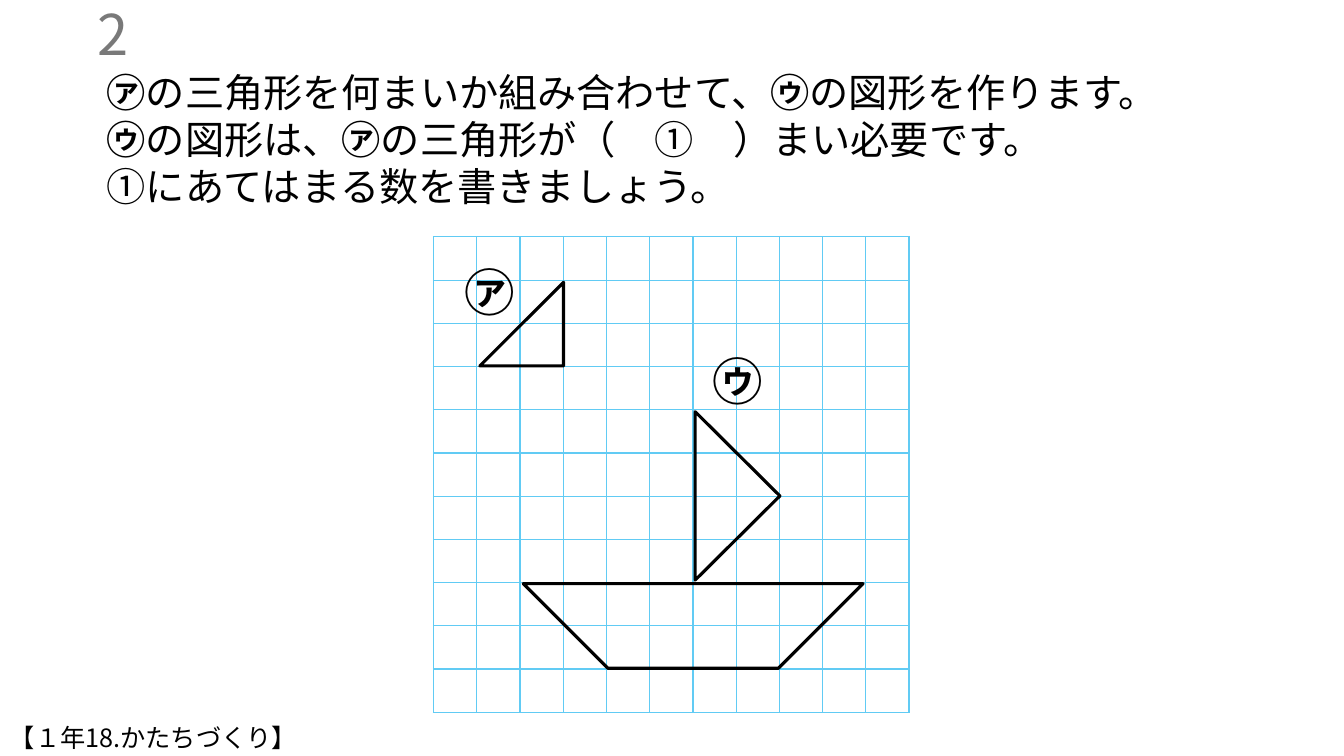
from lxml import etree
from pptx import Presentation, util as u
from pptx.dml.color import RGBColor
from pptx.enum import shapes, text
from pptx.oxml.ns import qn

BLACK = RGBColor(0, 0, 0)
GREY = RGBColor(0x79, 0x79, 0x79)
BLUE = RGBColor(0x61, 0xCB, 0xF4)
FONT = "Noto Sans CJK JP"

# Each run: text, bold
TASK = [
    [("㋐", True), ("の三角形を何まいか組み合わせて、", False),
     ("㋒", True), ("の図形を作ります。", False)],
    [("㋒", True), ("の図形は、", False), ("㋐", True),
     ("の三角形が（　①　）まい必要です。", False)],
    [("①にあてはまる数を書きましょう。", False)],
]
TASK_BOX = (0.96, 0.59, 11.53, 1.51)
# Label: runs, box, size, colour, alignment, anchor
LEFT, RIGHT = text.PP_ALIGN.LEFT, text.PP_ALIGN.RIGHT
TOP, MID = text.MSO_ANCHOR.TOP, text.MSO_ANCHOR.MIDDLE
LABELS = [
    ([("2", False)], (0.37, 0.1, 1, 0.4), 40, GREY, RIGHT, MID),
    ([("㋐", True)], (4.51, 2.49, 0.64, 0.71), 36, BLACK, LEFT, TOP),
    ([("㋒", True)], (6.97, 3.37, 0.64, 0.71), 36, BLACK, LEFT, TOP),
    ([("【１年", False), ("18.", False), ("かたちづくり】", False)],
     (0, 7.09, 7.49, 0.4), 18, BLACK, LEFT, TOP),
]
GRID = (4.3, 2.35, 4.72, 4.72)
COUNT = 11
# Triangle: preset, box, turn
TRIS = [
    (shapes.MSO_SHAPE.RIGHT_TRIANGLE, (4.76, 2.8, 0.83, 0.83), 270),
    (shapes.MSO_SHAPE.ISOSCELES_TRIANGLE, (6.48, 4.5, 1.67, 0.84), 90),
]
HULL = [(5.19, 5.79), (8.56, 5.79), (7.72, 6.63), (6.03, 6.63)]


def place(box):
    return [u.Inches(n) for n in box]


def write(frame, lines, size, color, align=LEFT, anchor=TOP):
    """Fill a text frame with lines of (text, bold) runs."""
    frame.word_wrap = True
    frame.auto_size = text.MSO_AUTO_SIZE.NONE
    frame.vertical_anchor = anchor
    frame.margin_left = frame.margin_right = u.Inches(0.1)
    frame.margin_top = u.Inches(0.05 + size / 700)
    frame.margin_bottom = u.Inches(0.05)
    for i, line in enumerate(lines):
        para = frame.add_paragraph() if i else frame.paragraphs[0]
        para.alignment = align
        para.line_spacing = u.Pt(size * 1.2)
        para.space_before = u.Pt(0)
        font = para.font
        font.size, font.name = u.Pt(size), FONT
        font.color.rgb = color
        for words, bold in line:
            run = para.add_run()
            run.text = words
            run.font.bold = bold
            east = etree.SubElement(run.font._element, qn("a:ea"))
            east.set("typeface", FONT)


def edge(cell):
    """Draw a thin line on all four sides of a cell."""
    props = cell._tc.get_or_add_tcPr()
    for i, side in enumerate(("lnL", "lnR", "lnT", "lnB")):
        line = etree.Element(qn("a:" + side), w=str(u.Pt(1)))
        fill = etree.SubElement(line, qn("a:solidFill"))
        etree.SubElement(fill, qn("a:srgbClr"), val=str(BLUE))
        props.insert(i, line)


def outline(shape):
    shape.shadow.inherit = False
    shape.fill.background()
    shape.line.color.rgb = BLACK
    shape.line.width = u.Pt(2.25)


def main():
    deck = Presentation()
    deck.slide_width, deck.slide_height = u.Inches(13.33), u.Inches(7.5)
    slide = deck.slides.add_slide(deck.slide_layouts[5])
    parts = slide.shapes

    title = parts.title
    title.left, title.top, title.width, title.height = place(TASK_BOX)
    write(title.text_frame, TASK, 28, BLACK)

    table = parts.add_table(COUNT, COUNT, *place(GRID)).table
    table.first_row = table.horz_banding = False
    for row in table.rows:
        row.height = u.Inches(GRID[3] / COUNT)
    for col in table.columns:
        col.width = u.Inches(GRID[2] / COUNT)
    for cell in table.iter_cells():
        cell.margin_top = cell.margin_bottom = 0
        cell.fill.background()
        edge(cell)

    for runs, box, size, color, align, anchor in LABELS:
        frame = parts.add_textbox(*place(box)).text_frame
        write(frame, [runs], size, color, align, anchor)

    for kind, box, turn in TRIS:
        tri = parts.add_shape(kind, *place(box))
        tri.rotation = turn
        outline(tri)

    start, *rest = [place(point) for point in HULL]
    path = parts.build_freeform(*start)
    path.add_line_segments(rest, close=True)
    outline(path.convert_to_shape())

    deck.save("out.pptx")


if __name__ == "__main__":
    main()
